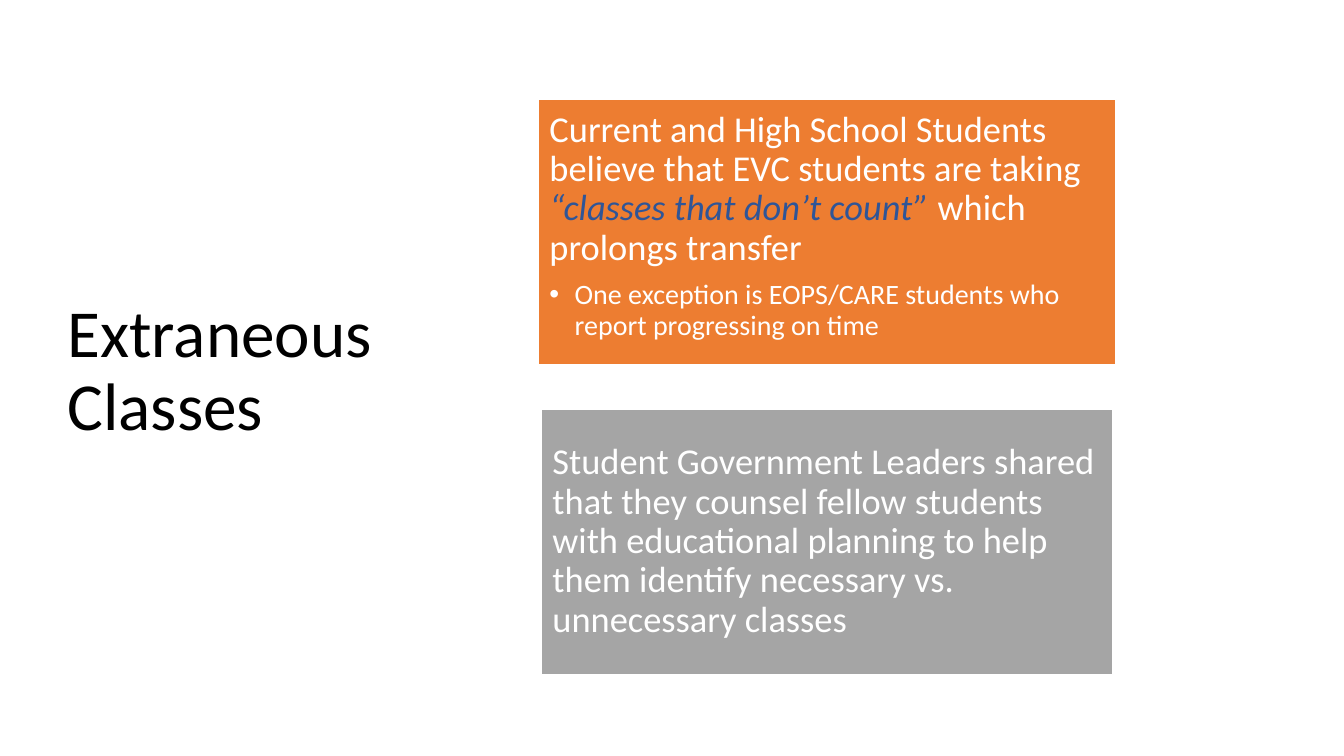
from dataclasses import dataclass

from lxml import etree
from pptx import Presentation
from pptx.dml.color import RGBColor
from pptx.enum.shapes import MSO_SHAPE
from pptx.enum.text import MSO_ANCHOR, PP_ALIGN
from pptx.oxml.ns import qn
from pptx.util import Pt

SCALE = 9144
RECT = MSO_SHAPE.RECTANGLE
TOP, MIDDLE = MSO_ANCHOR.TOP, MSO_ANCHOR.MIDDLE
LEFT = PP_ALIGN.LEFT
COLORS = {
    "black": "000000",
    "white": "FFFFFF",
    "orange": "ED7D31",
    "gray": "A5A5A5",
    "blue": "2F5597",
}


@dataclass
class Run:
    text: str
    color: str = "white"
    italic: bool = False


@dataclass
class Para:
    runs: list[Run]
    size: int = 26
    after: int = 9
    indent: int = 0


@dataclass
class Panel:
    left: int
    top: int
    width: int
    height: int
    fill: str
    anchor: MSO_ANCHOR
    paras: list[Para]


TITLE = Para([Run("Extraneous Classes", "black")], 48, 0)
PANELS = [
    Panel(534, 99, 573, 263, "orange", TOP, [
        Para([
            Run("Current and High School Students believe that EVC students are taking "),
            Run("“classes that don’t count” ", "blue", True),
            Run("which prolongs transfer"),
        ]),
        Para([Run("One exception is EOPS/CARE students who report progressing on time")],
             20, 3, 25),
    ]),
    Panel(537, 406, 567, 263, "gray", MIDDLE, [
        Para([Run("Student Government Leaders shared that they counsel fellow students "
                  "with educational planning to help them identify necessary vs. "
                  "unnecessary classes")]),
    ]),
]


def px(value: int) -> int:
    return value * SCALE


def rgb(name: str) -> RGBColor:
    return RGBColor.from_string(COLORS[name])


def style(item, values: dict) -> None:
    for name, value in values.items():
        setattr(item, name, value)


def add_bullet(para, indent: int) -> None:
    props = para._p.get_or_add_pPr()
    props.set("marL", str(px(indent)))
    props.set("indent", str(-px(indent)))
    etree.SubElement(props, qn("a:buFont"), typeface="Arial")
    etree.SubElement(props, qn("a:buChar"), char="•")


def write(frame, paras: list[Para], anchor: MSO_ANCHOR, side: int, edge: int) -> None:
    style(frame, {
        "word_wrap": True,
        "vertical_anchor": anchor,
        "margin_left": px(side),
        "margin_right": px(side),
        "margin_top": px(edge),
        "margin_bottom": px(edge),
    })
    for index, item in enumerate(paras):
        para = frame.add_paragraph() if index else frame.paragraphs[0]
        if item.indent:
            add_bullet(para, item.indent)
        style(para, {
            "alignment": LEFT,
            "line_spacing": 0.9,
            "space_after": Pt(item.after),
        })
        for part in item.runs:
            run = para.add_run()
            run.text = part.text
            style(run.font, {
                "name": "Calibri",
                "size": Pt(item.size),
                "italic": part.italic,
            })
            run.font.color.rgb = rgb(part.color)


def draw_panel(slide, panel: Panel) -> None:
    spot = map(px, (panel.left, panel.top, panel.width, panel.height))
    shape = slide.shapes.add_shape(RECT, *spot)
    shape.shadow.inherit = False
    shape.fill.solid()
    shape.fill.fore_color.rgb = rgb(panel.fill)
    shape.line.color.rgb = rgb("white")
    shape.line.width = Pt(1)
    write(shape.text_frame, panel.paras, panel.anchor, 11, 11)


def main() -> None:
    deck = Presentation()
    style(deck, {"slide_width": px(1333), "slide_height": px(750)})
    slide = deck.slides.add_slide(deck.slide_layouts[6])
    title = slide.shapes.add_textbox(*map(px, (57, 68, 416, 602)))
    write(title.text_frame, [TITLE], MIDDLE, 10, 5)
    for panel in PANELS:
        draw_panel(slide, panel)
    deck.save("out.pptx")


if __name__ == "__main__":
    main()
